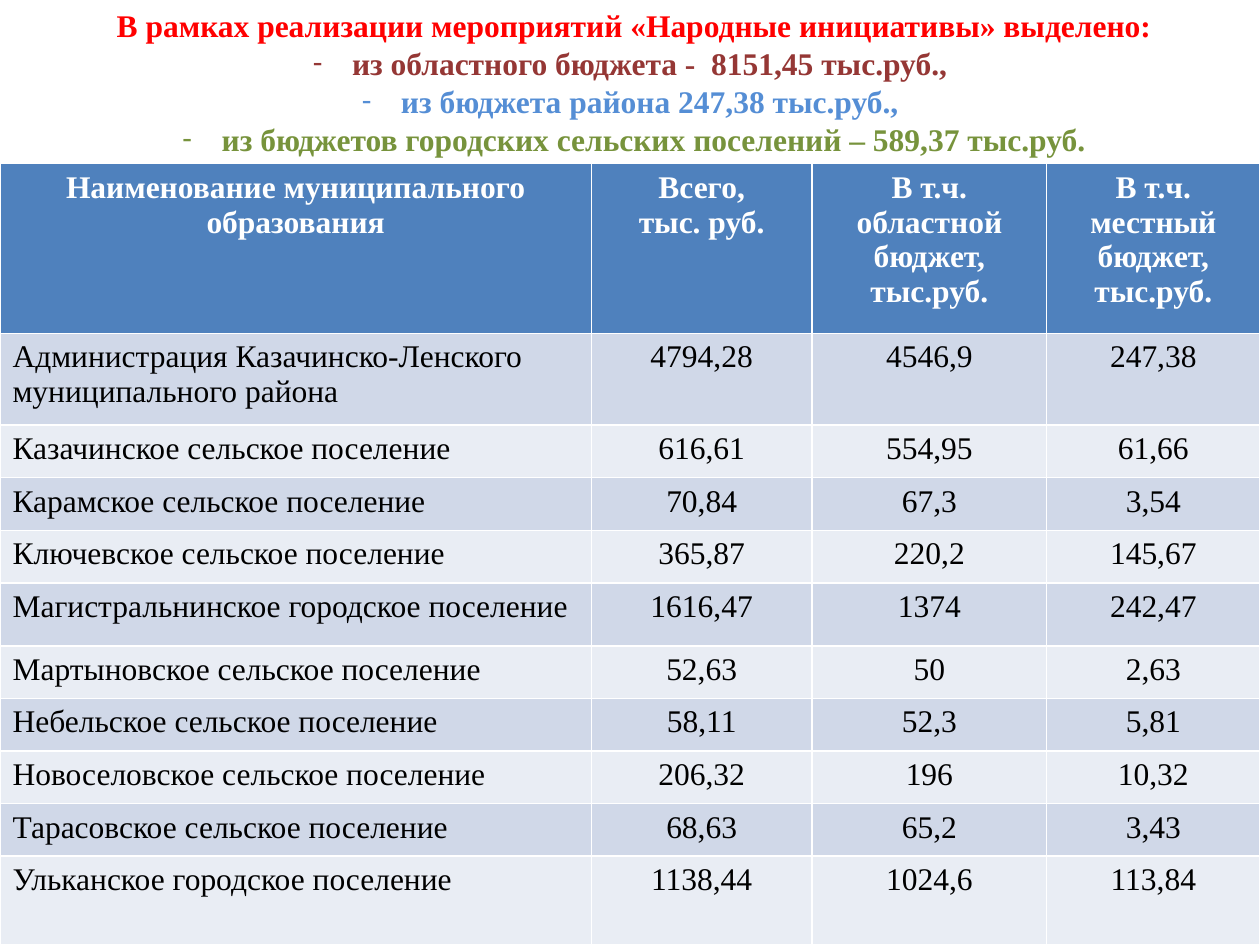
from lxml import etree
from pptx import Presentation
from pptx.dml.color import RGBColor
from pptx.enum import text
from pptx.oxml.ns import qn
from pptx.util import Cm, Pt

# Content
HEADING = "В рамках реализации мероприятий «Народные инициативы» выделено:"
SOURCES = [
    ("из областного бюджета -  8151,45 тыс.руб., ", "region"),
    ("из бюджета района 247,38 тыс.руб., ", "district"),
    ("из бюджетов городских сельских поселений – 589,37 тыс.руб.", "settlement"),
]
COLUMNS = [
    "Наименование муниципального образования",
    "Всего,\nтыс. руб.",
    "В т.ч. областной бюджет, тыс.руб.",
    "В т.ч. местный бюджет,\nтыс.руб.",
]
BUDGETS = [
    ("Администрация Казачинско-Ленского муниципального района", "4794,28", "4546,9", "247,38"),
    ("Казачинское сельское поселение", "616,61", "554,95", "61,66"),
    ("Карамское сельское поселение", "70,84", "67,3", "3,54"),
    ("Ключевское сельское поселение", "365,87", "220,2", "145,67"),
    ("Магистральнинское городское поселение", "1616,47", "1374", "242,47"),
    ("Мартыновское сельское поселение", "52,63", "50", "2,63"),
    ("Небельское сельское поселение", "58,11", "52,3", "5,81"),
    ("Новоселовское сельское поселение", "206,32", "196", "10,32"),
    ("Тарасовское сельское поселение", "68,63", "65,2", "3,43"),
    ("Ульканское городское поселение", "1138,44", "1024,6", "113,84"),
]

THEME = {
    "font": "Times New Roman", "bullet_font": "Calibri", "size": Pt(18),
    "heading": "FF0000", "region": "953735", "district": "558ED5", "settlement": "77933C",
    "header_text": "FFFFFF", "header_fill": "4F81BD",
    "body_text": "000000", "bands": ("D0D8E8", "E9EDF4"),
}

# Sizes in centimetres
COLUMN_WIDTHS = (11.92, 4.45, 4.73, 4.3)
ROW_HEIGHT = 1.06
SPECIAL_HEIGHTS = {0: 3.42, 1: 1.85, 5: 1.27, 10: 1.78}
TABLE_TOP = 3.3


def style(paragraph, color, bold, centred=True):
    paragraph.alignment = text.PP_ALIGN.CENTER if centred else text.PP_ALIGN.LEFT
    for run in paragraph.runs:
        run.font.name = THEME["font"]
        run.font.size = THEME["size"]
        run.font.bold = bold
        run.font.color.rgb = RGBColor.from_string(THEME[color])


def add_dash(paragraph, indent=Cm(0.79)):
    properties = paragraph._p.get_or_add_pPr()
    properties.set("marL", str(indent))
    properties.set("indent", str(-indent))
    etree.SubElement(properties, qn("a:buFont")).set("typeface", THEME["bullet_font"])
    etree.SubElement(properties, qn("a:buChar")).set("char", "-")


def add_heading(slide):
    title = slide.shapes.title
    title.left, title.top, title.width, title.height = Cm(0.58), Cm(0), Cm(24.41), Cm(3.33)
    frame = title.text_frame
    frame.auto_size = text.MSO_AUTO_SIZE.NONE
    frame.vertical_anchor = text.MSO_ANCHOR.TOP
    frame.text = HEADING
    style(frame.paragraphs[0], "heading", True)
    for wording, color in SOURCES:
        source = frame.add_paragraph()
        source.text = wording
        add_dash(source)
        style(source, color, True)


def add_budget_table(slide):
    rows = [COLUMNS, *BUDGETS]
    heights = [SPECIAL_HEIGHTS.get(i, ROW_HEIGHT) for i in range(len(rows))]
    table = slide.shapes.add_table(
        len(rows), len(COLUMNS), Cm(0), Cm(TABLE_TOP),
        Cm(sum(COLUMN_WIDTHS)), Cm(sum(heights))).table
    for column, width in zip(table.columns, COLUMN_WIDTHS):
        column.width = Cm(width)
    for i, (values, height) in enumerate(zip(rows, heights)):
        table.rows[i].height = Cm(height)
        is_header = i == 0
        fill = THEME["header_fill"] if is_header else THEME["bands"][(i - 1) % 2]
        for j, value in enumerate(values):
            cell = table.cell(i, j)
            cell.fill.solid()
            cell.fill.fore_color.rgb = RGBColor.from_string(fill)
            cell.text_frame.text = value
            for paragraph in cell.text_frame.paragraphs:
                style(paragraph, "header_text" if is_header else "body_text",
                      is_header, centred=is_header or j > 0)


def main():
    deck = Presentation()
    deck.slide_width, deck.slide_height = Cm(25.4), Cm(19.05)
    slide = deck.slides.add_slide(deck.slide_layouts[5])
    add_heading(slide)
    add_budget_table(slide)
    deck.save("out.pptx")


if __name__ == "__main__":
    main()
